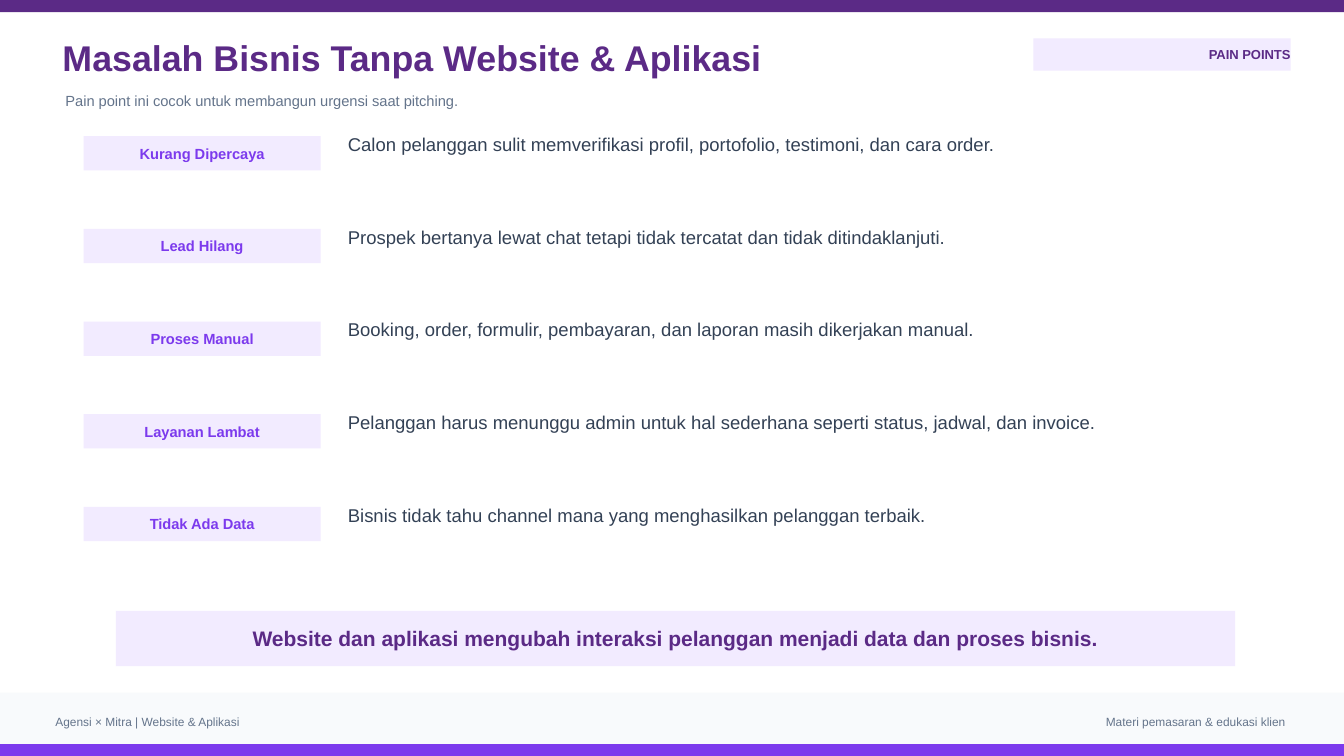
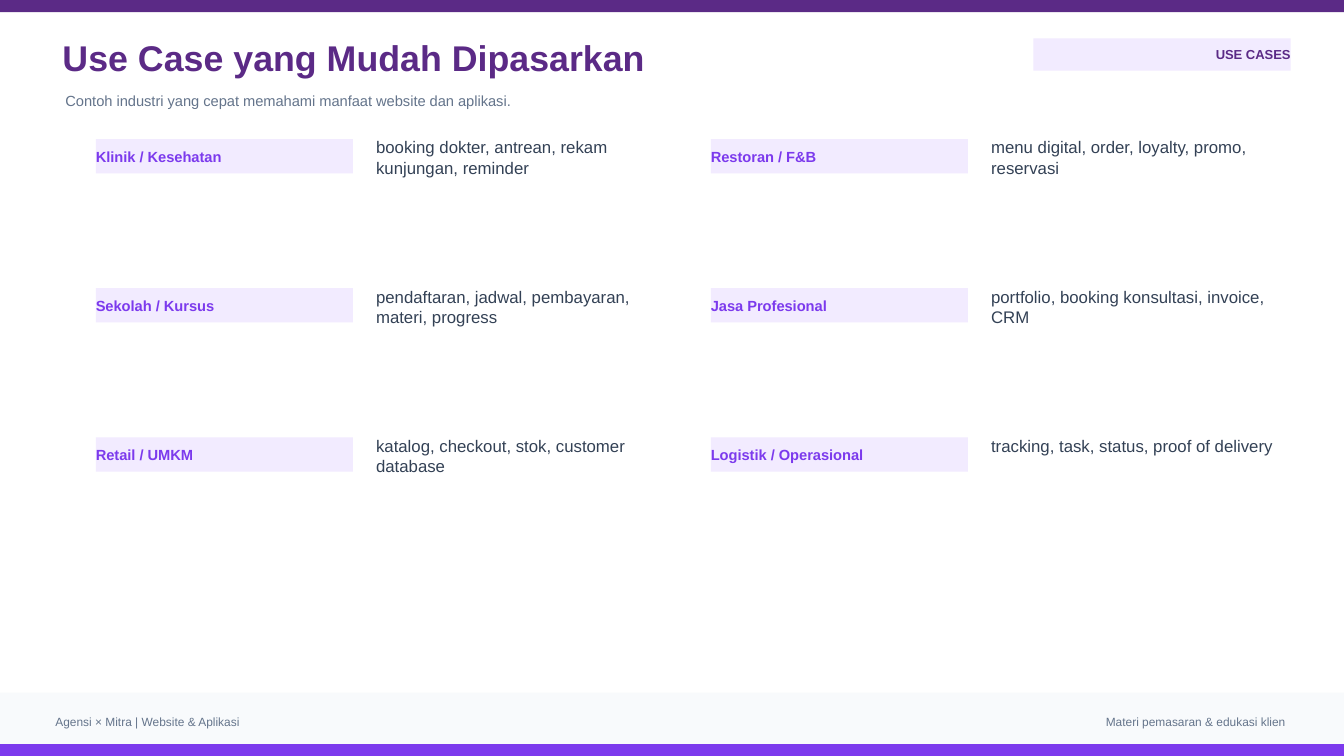
from dataclasses import dataclass
from typing import Optional

import pptx
import pptx.dml.color
import pptx.enum.shapes
import pptx.enum.text
import pptx.presentation
import pptx.slide
import pptx.util

Inches = pptx.util.Inches
RGBColor = pptx.dml.color.RGBColor
ALIGN = pptx.enum.text.PP_ALIGN
ANCHOR = pptx.enum.text.MSO_ANCHOR

# Shared style
FONT = "Arial"
WHITE = RGBColor(0xFF, 0xFF, 0xFF)
DEEP_PURPLE = RGBColor(0x5B, 0x2A, 0x86)
VIOLET = RGBColor(0x7C, 0x3A, 0xED)
LAVENDER = RGBColor(0xF2, 0xEB, 0xFF)
FOOTER_GRAY = RGBColor(0xF8, 0xFA, 0xFC)
MUTED = RGBColor(0x64, 0x74, 0x8B)
BODY = RGBColor(0x33, 0x41, 0x55)
SLIDE_WIDTH = 13.33
SLIDE_HEIGHT = 7.5
EDGE_HEIGHT = 0.12
FOOTER_HEIGHT = 0.51


@dataclass(frozen=True)
class Box:
    """Position and size in inches."""
    left: float
    top: float
    width: float
    height: float

    def lengths(self) -> tuple:
        return tuple(Inches(v) for v in (self.left, self.top, self.width, self.height))


@dataclass(frozen=True)
class Topic:
    label: str
    detail: str


@dataclass(frozen=True)
class TopicGrid:
    """First label and detail boxes, and how they repeat."""
    label: Box
    detail: Box
    columns: int
    column_step: float
    row_step: float
    detail_size: float
    label_align: ALIGN


PAIN_POINTS = [
    Topic("Kurang Dipercaya",
          "Calon pelanggan sulit memverifikasi profil, portofolio, testimoni, dan cara order."),
    Topic("Lead Hilang",
          "Prospek bertanya lewat chat tetapi tidak tercatat dan tidak ditindaklanjuti."),
    Topic("Proses Manual",
          "Booking, order, formulir, pembayaran, dan laporan masih dikerjakan manual."),
    Topic("Layanan Lambat",
          "Pelanggan harus menunggu admin untuk hal sederhana seperti status, jadwal, dan invoice."),
    Topic("Tidak Ada Data",
          "Bisnis tidak tahu channel mana yang menghasilkan pelanggan terbaik."),
]
PAIN_POINT_GRID = TopicGrid(
    label=Box(0.83, 1.35, 2.35, 0.34), detail=Box(3.45, 1.32, 8.15, 0.44),
    columns=1, column_step=0, row_step=0.92, detail_size=13.2, label_align=ALIGN.CENTER)

USE_CASES = [
    Topic("Klinik / Kesehatan", "booking dokter, antrean, rekam kunjungan, reminder"),
    Topic("Restoran / F&B", "menu digital, order, loyalty, promo, reservasi"),
    Topic("Sekolah / Kursus", "pendaftaran, jadwal, pembayaran, materi, progress"),
    Topic("Jasa Profesional", "portfolio, booking konsultasi, invoice, CRM"),
    Topic("Retail / UMKM", "katalog, checkout, stok, customer database"),
    Topic("Logistik / Operasional", "tracking, task, status, proof of delivery"),
]
USE_CASE_GRID = TopicGrid(
    label=Box(0.95, 1.38, 2.55, 0.34), detail=Box(3.73, 1.36, 3.05, 0.55),
    columns=2, column_step=6.1, row_step=1.48, detail_size=12, label_align=ALIGN.LEFT)


def add_band(slide: pptx.slide.Slide, box: Box, fill: RGBColor):
    band = slide.shapes.add_shape(pptx.enum.shapes.MSO_SHAPE.RECTANGLE, *box.lengths())
    band.shadow.inherit = False
    band.fill.solid()
    band.fill.fore_color.rgb = fill
    band.line.fill.background()
    return band


def add_text(slide: pptx.slide.Slide, box: Box, text: str, *, size: float,
             color: RGBColor, bold: bool = False, align: ALIGN = ALIGN.LEFT,
             anchor: ANCHOR = ANCHOR.MIDDLE, fill: Optional[RGBColor] = None) -> None:
    """Write text in a plain box, or on a band when a fill is given."""
    if fill is None:
        holder = slide.shapes.add_textbox(*box.lengths())
    else:
        holder = add_band(slide, box, fill)
    frame = holder.text_frame
    frame.word_wrap = True
    frame.vertical_anchor = anchor
    frame.margin_left = frame.margin_right = frame.margin_top = frame.margin_bottom = 0
    paragraph = frame.paragraphs[0]
    paragraph.alignment = align
    run = paragraph.add_run()
    run.text = text
    run.font.name = FONT
    run.font.size = pptx.util.Pt(size)
    run.font.bold = bold
    run.font.color.rgb = color


def add_base_slide(deck: pptx.presentation.Presentation, title: str, subtitle: str,
                   tag: str) -> pptx.slide.Slide:
    slide = deck.slides.add_slide(deck.slide_layouts[6])
    slide.background.fill.solid()
    slide.background.fill.fore_color.rgb = WHITE

    # Edge bands and footer
    bottom_edge = SLIDE_HEIGHT - EDGE_HEIGHT
    add_band(slide, Box(0, 0, SLIDE_WIDTH, EDGE_HEIGHT), DEEP_PURPLE)
    add_band(slide, Box(0, bottom_edge, SLIDE_WIDTH, EDGE_HEIGHT), VIOLET)
    add_band(slide, Box(0, bottom_edge - FOOTER_HEIGHT, SLIDE_WIDTH, FOOTER_HEIGHT), FOOTER_GRAY)
    add_text(slide, Box(0.55, 7.07, 5.6, 0.18), "Agensi × Mitra | Website & Aplikasi",
             size=8.5, color=MUTED)
    add_text(slide, Box(8.45, 7.07, 4.3, 0.18), "Materi pemasaran & edukasi klien",
             size=8.5, color=MUTED, align=ALIGN.RIGHT)

    # Heading and section tag
    add_text(slide, Box(0.62, 0.36, 9.4, 0.42), title, size=25.5, color=DEEP_PURPLE, bold=True)
    add_text(slide, Box(0.65, 0.86, 10.2, 0.28), subtitle, size=10.5, color=MUTED)
    add_text(slide, Box(10.25, 0.38, 2.55, 0.32), tag, size=9.3, color=DEEP_PURPLE,
             bold=True, align=ALIGN.RIGHT, fill=LAVENDER)
    return slide


def add_topics(slide: pptx.slide.Slide, topics: list[Topic], grid: TopicGrid) -> None:
    for index, topic in enumerate(topics):
        row, column = divmod(index, grid.columns)
        label_box, detail_box = (
            Box(first.left + column * grid.column_step, first.top + row * grid.row_step,
                first.width, first.height)
            for first in (grid.label, grid.detail))
        add_text(slide, label_box, topic.label, size=10.5, color=VIOLET, bold=True,
                 align=grid.label_align, fill=LAVENDER)
        add_text(slide, detail_box, topic.detail, size=grid.detail_size, color=BODY,
                 anchor=ANCHOR.TOP)


def main() -> None:
    deck = pptx.Presentation()
    deck.slide_width = Inches(SLIDE_WIDTH)
    deck.slide_height = Inches(SLIDE_HEIGHT)

    # Pain points
    pain_slide = add_base_slide(
        deck, "Masalah Bisnis Tanpa Website & Aplikasi",
        "Pain point ini cocok untuk membangun urgensi saat pitching.", "PAIN POINTS")
    add_topics(pain_slide, PAIN_POINTS, PAIN_POINT_GRID)
    add_text(pain_slide, Box(1.15, 6.06, 11.1, 0.55),
             "Website dan aplikasi mengubah interaksi pelanggan menjadi data dan proses bisnis.",
             size=15, color=DEEP_PURPLE, bold=True, align=ALIGN.CENTER, fill=LAVENDER)

    # Use cases
    use_case_slide = add_base_slide(
        deck, "Use Case yang Mudah Dipasarkan",
        "Contoh industri yang cepat memahami manfaat website dan aplikasi.", "USE CASES")
    add_topics(use_case_slide, USE_CASES, USE_CASE_GRID)

    deck.save("out.pptx")


if __name__ == "__main__":
    main()
